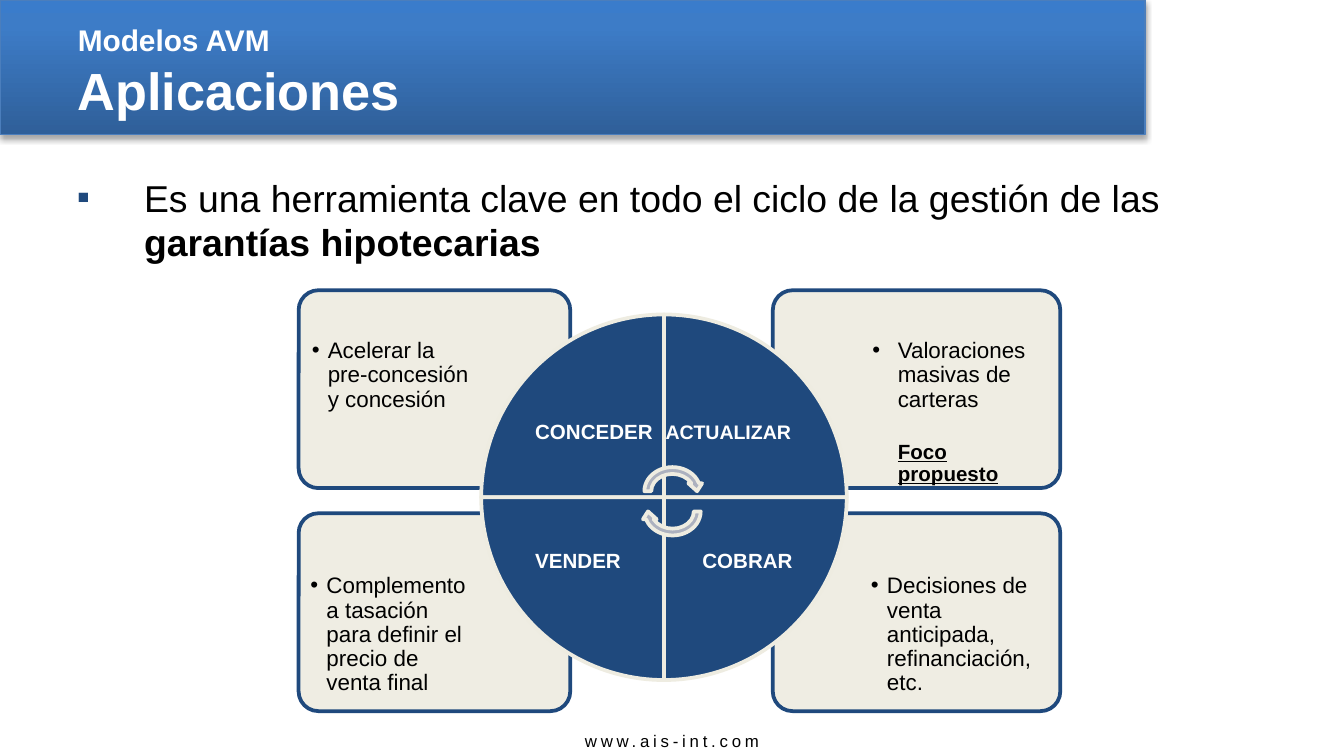
from lxml import etree
from pptx import Presentation
from pptx.dml.color import RGBColor
from pptx.enum import shapes, text
from pptx.oxml import parse_xml
from pptx.oxml.ns import nsdecls, qn
from pptx.util import Pt

COLORS = {"navy": "1F497D", "cream": "EEECE1", "arrow": "ACB1BF", "edge": "4B7EBC",
          "black": "000000", "white": "FFFFFF"}
RGB = {name: RGBColor.from_string(value) for name, value in COLORS.items()}
SHAPE, ALIGN, ANCHOR = shapes.MSO_SHAPE, text.PP_ALIGN, text.MSO_ANCHOR


def write(para, words, size, color="black", **values):
    """Add a run of Arial to the paragraph."""
    span = para.add_run()
    span.text = words
    span.font.color.rgb = RGB[color]
    for name, value in {"name": "Arial", "size": Pt(size), **values}.items():
        setattr(span.font, name, value)
    return span


def add_bullet(para, mark, indent, color):
    """Give the paragraph a coloured bullet and a hanging indent in points."""
    props = para._p.get_or_add_pPr()
    props.set("marL", str(Pt(indent)))
    props.set("indent", str(-Pt(indent)))
    tint = etree.SubElement(props, qn("a:buClr"))
    etree.SubElement(tint, qn("a:srgbClr"), val=COLORS[color])
    etree.SubElement(props, qn("a:buFont"), typeface="Arial")
    etree.SubElement(props, qn("a:buChar"), char=mark)


deck = Presentation()
deck.slide_width, deck.slide_height = Pt(720), Pt(405)
page = deck.slides.add_slide(deck.slide_layouts[1])
title, body = page.placeholders

# Banner, behind the title
banner = page.shapes.add_shape(SHAPE.RECTANGLE, 0, 0, Pt(613.5), Pt(72))
banner.line.color.rgb = RGB["edge"]
banner.line.width = Pt(0.75)
banner.fill.background()
props = banner._element.spPr
props.replace(props.find(qn("a:noFill")), parse_xml(
    f'<a:gradFill {nsdecls("a")} rotWithShape="1"><a:gsLst>'
    '<a:gs pos="0"><a:srgbClr val="2F5F99"/></a:gs>'
    '<a:gs pos="80000"><a:srgbClr val="3D7CC7"/></a:gs>'
    '<a:gs pos="100000"><a:srgbClr val="3A7CCB"/></a:gs>'
    '</a:gsLst><a:lin ang="16200000" scaled="0"/></a:gradFill>'))
props.append(parse_xml(
    f'<a:effectLst {nsdecls("a")}><a:outerShdw blurRad="{Pt(3.1)}" dist="{Pt(1.8)}" '
    'dir="5400000" rotWithShape="0"><a:srgbClr val="000000"><a:alpha val="35000"/>'
    '</a:srgbClr></a:outerShdw></a:effectLst>'))
page.shapes._spTree.insert(2, banner._element)

# Title and introduction
for holder, place, anchor in ((title, (34.5, 4.5, 572.5, 67.5), ANCHOR.MIDDLE),
                              (body, (34, 90, 650, 288), ANCHOR.TOP)):
    holder.left, holder.top, holder.width, holder.height = map(Pt, place)
    holder.text_frame.auto_size = text.MSO_AUTO_SIZE.NONE
    holder.text_frame.vertical_anchor = anchor

para = title.text_frame.paragraphs[0]
para.alignment = ALIGN.LEFT
write(para, "Modelos AVM", 16, "white", bold=True)
para.add_line_break()
write(para, "Aplicaciones", 28, "white", bold=True)

para = body.text_frame.paragraphs[0]
add_bullet(para, "▪", 36, "navy")
para.space_before = Pt(0)
write(para, "Es una herramienta clave en todo el ciclo de la gestión de las ", 20)
write(para, "garantías hipotecarias", 20, bold=True)

# Web address
box = page.shapes.add_textbox(0, Pt(388), Pt(720), Pt(18))
para = box.text_frame.paragraphs[0]
para.alignment = ALIGN.CENTER
span = write(para, "www.ais-int.com", 9)
span._r.get_or_add_rPr().set("spc", "200")

# Corner panels: left, top, width, text left, text width, top inset, inset, indent, words
LEFT, RIGHT = (160, 145.5, 162.7, 97.2), (414, 154, 463, 103.7)
UPPER, LOWER = (155.5, 158.4, 23.4), (275, 303.8, 4)
panels = [
    (RIGHT, LOWER, 3.6, 8.6, "Decisiones de venta anticipada, refinanciación, etc.", None),
    (LEFT, LOWER, 3.6, 8.6, "Complemento a tasación para definir el precio de venta final", None),
    (RIGHT, UPPER, 4.3, 13.7, "Valoraciones masivas de carteras", "Foco propuesto"),
    (LEFT, UPPER, 4.3, 8.6, "Acelerar la pre-concesión y concesión", None),
]
for column, row, inset, indent, words, focus in panels:
    left, width, text_left, text_width = column
    top, text_top, top_inset = row
    panel = page.shapes.add_shape(SHAPE.ROUNDED_RECTANGLE, Pt(left), Pt(top), Pt(width), Pt(106))
    panel.adjustments[0] = 0.1
    panel.shadow.inherit = False
    panel.fill.solid()
    panel.fill.fore_color.rgb = RGB["cream"]
    tint = panel._element.spPr.find(qn("a:solidFill"))[0]
    etree.SubElement(tint, qn("a:alpha"), val="90000")
    panel.line.color.rgb = RGB["navy"]
    panel.line.width = Pt(2)

    box = page.shapes.add_textbox(Pt(text_left), Pt(text_top), Pt(text_width), Pt(75))
    frame = box.text_frame
    for name, value in {"word_wrap": True, "margin_left": Pt(inset), "margin_right": Pt(inset),
                        "margin_top": Pt(top_inset), "margin_bottom": Pt(inset)}.items():
        setattr(frame, name, value)
    para = frame.paragraphs[0]
    add_bullet(para, "•", indent, "black")
    para.line_spacing = 0.9
    write(para, words, 12)
    if focus:
        para = frame.add_paragraph()
        para._p.get_or_add_pPr().set("marL", str(Pt(indent)))
        para.line_spacing = 0.9
        para.space_before = Pt(16)
        write(para, focus, 11, bold=True, underline=True)

# Wheel: four quarters, clockwise from the upper left, then two arrows
CENTER_X, CENTER_Y, RADIUS, LABEL = 355.7, 266.4, 97.9, 69
quarters = [("CONCEDER", -1, -1, ALIGN.LEFT, 11), ("ACTUALIZAR", 0, -1, ALIGN.CENTER, 10.5),
            ("COBRAR", 0, 0, ALIGN.RIGHT, 11), ("VENDER", -1, 0, ALIGN.LEFT, 11)]
wheel = [(SHAPE.PIE_WEDGE, CENTER_X + across * RADIUS, CENTER_Y + down * RADIUS,
          RADIUS, RADIUS, 90 * turn, "navy")
         for turn, (_, across, down, _, _) in enumerate(quarters)]
wheel += [(SHAPE.CIRCULAR_ARROW, 343.4, top, 33.8, 29.5, angle, "arrow")
          for top, angle in ((248.4, 0), (259.2, 180))]
for kind, left, top, width, height, angle, color in wheel:
    part = page.shapes.add_shape(kind, Pt(left), Pt(top), Pt(width), Pt(height))
    part.rotation = angle
    part.shadow.inherit = False
    part.fill.solid()
    part.fill.fore_color.rgb = RGB[color]
    part.line.color.rgb = RGB["cream"]
    part.line.width = Pt(2)

for label, across, down, align, size in quarters:
    box = page.shapes.add_textbox(Pt(CENTER_X + across * LABEL), Pt(CENTER_Y + down * LABEL),
                                  Pt(LABEL), Pt(LABEL))
    frame = box.text_frame
    for name, value in {"word_wrap": True, "vertical_anchor": ANCHOR.MIDDLE, "margin_left": 0,
                        "margin_right": 0, "margin_top": 0, "margin_bottom": 0}.items():
        setattr(frame, name, value)
    para = frame.paragraphs[0]
    para.alignment = align
    para.line_spacing = 0.9
    write(para, label, size, "white", bold=True)

deck.save("out.pptx")
